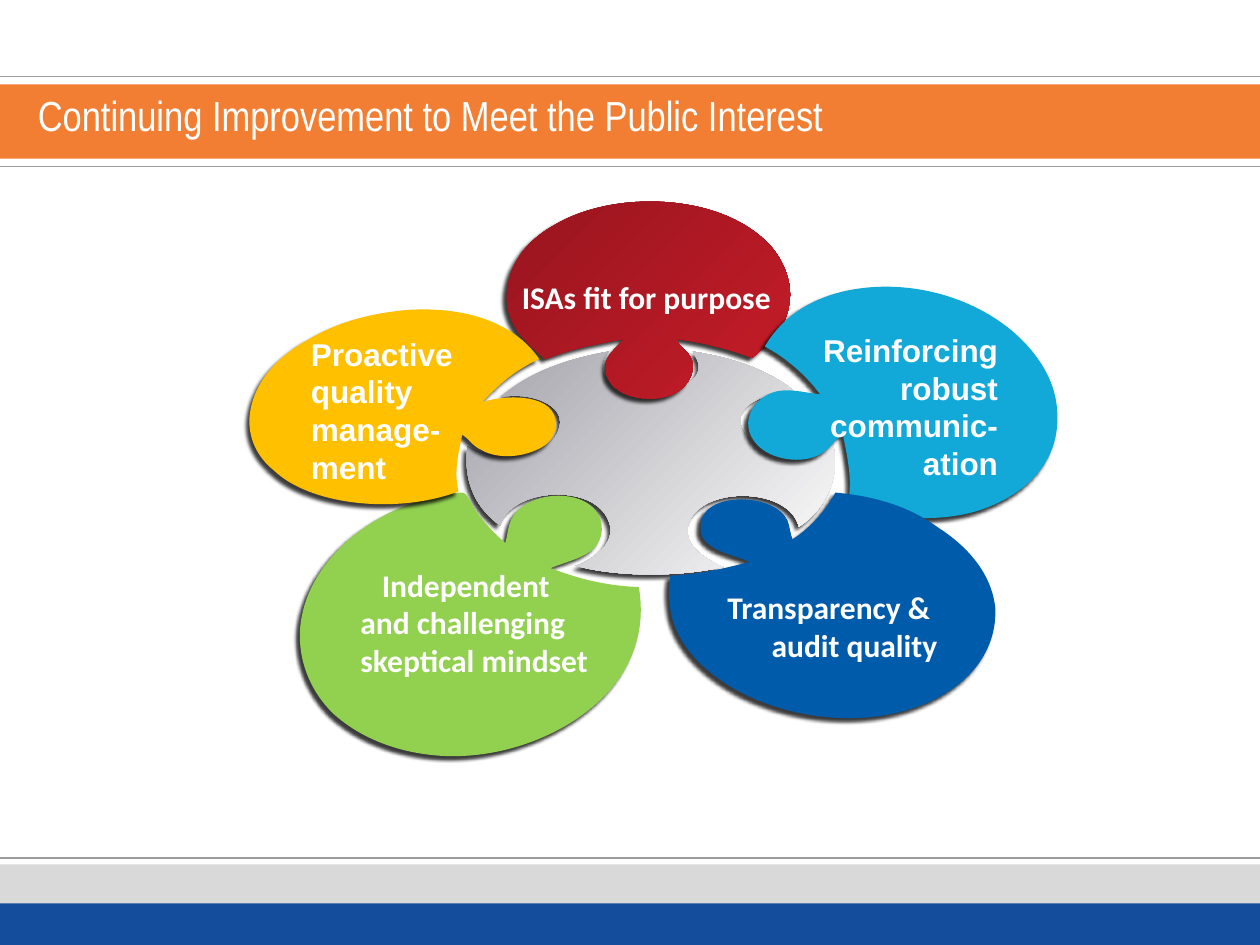
from lxml import etree
from pptx import Presentation
from pptx.dml.color import RGBColor
from pptx.enum.shapes import MSO_CONNECTOR, MSO_SHAPE
from pptx.enum.text import MSO_ANCHOR, MSO_AUTO_SIZE, PP_ALIGN
from pptx.oxml.ns import qn
from pptx.util import Inches, Pt

LEFT, CENTER, RIGHT = PP_ALIGN.LEFT, PP_ALIGN.CENTER, PP_ALIGN.RIGHT
TOP, MIDDLE = MSO_ANCHOR.TOP, MSO_ANCHOR.MIDDLE
RECTANGLE, STRAIGHT = MSO_SHAPE.RECTANGLE, MSO_CONNECTOR.STRAIGHT
NO_AUTOFIT = MSO_AUTO_SIZE.NONE
TITLE_ONLY = 5
SLIDE_WIDTH = 10

# Each outline is a start point, then three points for every Bezier curve.
HUB = [
    (4.83, 2.79), (4.81, 2.83), (4.77, 2.86), (4.78, 2.93), (4.82, 3.17), (5.46, 3.18), (5.54, 2.95),
    (5.56, 2.88), (5.52, 2.83), (5.5, 2.79), (5.83, 2.84), (6.14, 2.95), (6.33, 3.13),
    (6.12, 3.1), (5.84, 3.19), (5.88, 3.37), (5.93, 3.61), (6.41, 3.66), (6.61, 3.52),
    (6.68, 3.82), (6.52, 4.07), (6.34, 4.18), (6.27, 3.87), (5.59, 3.85), (5.47, 4.14),
    (5.4, 4.32), (5.6, 4.44), (5.74, 4.5), (5.39, 4.58), (4.9, 4.58), (4.57, 4.49),
    (4.72, 4.44), (4.92, 4.29), (4.82, 4.11), (4.68, 3.83), (4.05, 3.88), (3.97, 4.17),
    (3.8, 4.05), (3.67, 3.85), (3.71, 3.54), (3.93, 3.68), (4.39, 3.63), (4.44, 3.39),
    (4.49, 3.21), (4.21, 3.11), (3.98, 3.15), (4.19, 2.96), (4.49, 2.85), (4.83, 2.79)]
FIT_FOR_PURPOSE = [
    (5.97, 2.84), (5.79, 2.77), (5.59, 2.72), (5.37, 2.69), (5.39, 2.77), (5.5, 2.79), (5.5, 2.91),
    (5.5, 2.99), (5.44, 3.07), (5.39, 3.1), (5.22, 3.22), (4.84, 3.17), (4.81, 2.95),
    (4.79, 2.81), (4.89, 2.78), (4.95, 2.69), (4.73, 2.73), (4.52, 2.77), (4.33, 2.85),
    (4.19, 2.73), (3.98, 2.57), (4.03, 2.27), (4.07, 2.03), (4.23, 1.88), (4.41, 1.78),
    (4.89, 1.5), (5.77, 1.53), (6.14, 1.98), (6.21, 2.07), (6.28, 2.21), (6.27, 2.37),
    (6.25, 2.61), (6.12, 2.71), (5.97, 2.84)]
COMMUNICATION = [
    (6.73, 3.99), (6.77, 3.81), (6.72, 3.6), (6.69, 3.45), (6.63, 3.48), (6.59, 3.56), (6.52, 3.6),
    (6.37, 3.69), (6.12, 3.65), (6.01, 3.53), (5.84, 3.35), (6, 3.12), (6.2, 3.1),
    (6.31, 3.09), (6.41, 3.12), (6.51, 3.13), (6.4, 2.98), (6.24, 2.84), (6.07, 2.75),
    (6.24, 2.46), (6.54, 2.31), (6.91, 2.28), (7.43, 2.24), (7.94, 2.46), (8.21, 2.81),
    (8.31, 2.94), (8.41, 3.12), (8.39, 3.38), (8.36, 3.76), (8.04, 3.97), (7.74, 4.06),
    (7.42, 4.15), (7.02, 4.12), (6.73, 3.99)]
TRANSPARENCY = [
    (6.63, 3.91), (6.97, 3.94), (7.23, 4.03), (7.45, 4.19), (7.65, 4.32), (7.87, 4.53), (7.9, 4.83),
    (7.91, 5.13), (7.74, 5.35), (7.54, 5.48), (7.33, 5.62), (7.05, 5.7), (6.74, 5.7),
    (6.4, 5.7), (6.09, 5.61), (5.85, 5.48), (5.62, 5.35), (5.4, 5.16), (5.33, 4.89),
    (5.31, 4.79), (5.3, 4.68), (5.32, 4.57), (5.54, 4.56), (5.76, 4.51), (5.95, 4.46),
    (5.81, 4.4), (5.59, 4.37), (5.56, 4.22), (5.56, 4.2), (5.56, 4.15), (5.57, 4.12),
    (5.64, 3.9), (6.15, 3.92), (6.25, 4.13), (6.27, 4.18), (6.27, 4.23), (6.29, 4.28),
    (6.42, 4.2), (6.55, 4.06), (6.63, 3.91)]
MINDSET = [
    (4.01, 4.31), (4.03, 4.24), (4.03, 4.18), (4.06, 4.12), (4.18, 3.88), (4.7, 3.86), (4.77, 4.14),
    (4.78, 4.18), (4.78, 4.24), (4.76, 4.28), (4.71, 4.42), (4.51, 4.45), (4.37, 4.51),
    (4.58, 4.59), (4.8, 4.65), (5.07, 4.66), (5.16, 5.2), (4.84, 5.54), (4.54, 5.73),
    (4.27, 5.9), (3.9, 6.02), (3.51, 6), (3.18, 5.98), (2.87, 5.87), (2.64, 5.66),
    (2.49, 5.51), (2.37, 5.29), (2.38, 5.01), (2.4, 4.67), (2.61, 4.41), (2.82, 4.24),
    (3.04, 4.07), (3.31, 3.95), (3.65, 3.91), (3.66, 3.91), (3.66, 3.91), (3.67, 3.91),
    (3.7, 3.91), (3.73, 3.97), (3.75, 4.01), (3.82, 4.13), (3.93, 4.24), (4.01, 4.31)]
QUALITY = [
    (4.28, 2.85), (4.1, 2.93), (3.96, 3.05), (3.83, 3.19), (4.02, 3.13), (4.43, 3.12), (4.41, 3.38),
    (4.41, 3.44), (4.37, 3.5), (4.33, 3.53), (4.21, 3.62), (3.97, 3.66), (3.82, 3.57),
    (3.75, 3.54), (3.72, 3.48), (3.67, 3.45), (3.64, 3.58), (3.6, 3.75), (3.64, 3.9),
    (3.17, 4.08), (2.47, 4.02), (2.17, 3.73), (2.07, 3.65), (1.97, 3.51), (1.98, 3.32),
    (2, 3.03), (2.22, 2.82), (2.44, 2.7), (2.67, 2.56), (2.92, 2.49), (3.23, 2.46),
    (3.7, 2.43), (4.08, 2.56), (4.28, 2.85)]


def color(value):
    return RGBColor.from_string(value)


def write_text(shape, lines, size=18, font="Calibri", align=LEFT, anchor=MIDDLE, bold=True,
               insets=(0.1, 0.05, 0.1, 0.05), spacing=None):
    """Fill a shape with one paragraph per line; insets run left, top, right, bottom."""
    frame = shape.text_frame
    frame.word_wrap = True
    frame.auto_size = NO_AUTOFIT
    frame.vertical_anchor = anchor
    (frame.margin_left, frame.margin_top,
     frame.margin_right, frame.margin_bottom) = map(Inches, insets)
    for index, line in enumerate(lines):
        paragraph = frame.add_paragraph() if index else frame.paragraphs[0]
        paragraph.alignment = align
        paragraph.line_spacing = spacing
        run = paragraph.add_run()
        run.text = line
        run.font.size, run.font.name, run.font.bold = Pt(size), font, bold
        run.font.color.rgb = color("FFFFFF")


def curve_outline(shape):
    """Turn every three line segments of a freeform into one Bezier curve."""
    outline = shape._element.find(".//" + qn("a:path"))
    segments = outline.findall(qn("a:lnTo"))
    for first in range(0, len(segments), 3):
        curve = etree.Element(qn("a:cubicBezTo"))
        segments[first].addprevious(curve)
        for segment in segments[first:first + 3]:
            curve.append(segment[0])
            outline.remove(segment)


def add_shadow(shape):
    effects = shape._element.spPr.find(qn("a:effectLst"))
    shadow = etree.SubElement(effects, qn("a:outerShdw"), blurRad=str(Pt(2)), dist=str(Pt(3)),
                              dir=str(135 * 60000), algn="ctr", rotWithShape="0")
    black = etree.SubElement(shadow, qn("a:srgbClr"), val="000000")
    etree.SubElement(black, qn("a:alpha"), val="76000")


class PuzzleSlide:
    rule_color = "999B9D"

    def __init__(self, presentation):
        self.slide = presentation.slides.add_slide(presentation.slide_layouts[TITLE_ONLY])
        self.shapes = self.slide.shapes

    def band(self, top, height, fill):
        shape = self.shapes.add_shape(RECTANGLE, 0, Inches(top), Inches(SLIDE_WIDTH), Inches(height))
        shape.shadow.inherit = False
        shape.fill.solid()
        shape.fill.fore_color.rgb = color(fill)
        shape.line.fill.background()

    def rule(self, top):
        line = self.shapes.add_connector(STRAIGHT, 0, Inches(top), Inches(SLIDE_WIDTH), Inches(top))
        line.line.color.rgb = color(self.rule_color)
        line.line.width = Pt(0.75)
        etree.SubElement(line._element.spPr, qn("a:effectLst"))

    def title(self, text):
        title = self.shapes.title
        title.left, title.top = Inches(0.3), Inches(0.62)
        title.width, title.height = Inches(8.25), Inches(0.58)
        write_text(title, [text], size=24, font="Arial Narrow", bold=False, insets=(0, 0, 0, 0))
        self.shapes._spTree.append(title._element)  # in front of the band

    def piece(self, points, *fills):
        """Draw a puzzle piece with one fill colour, or two for a gradient."""
        start, *others = [(Inches(x), Inches(y)) for x, y in points]
        builder = self.shapes.build_freeform(*start)
        builder.add_line_segments(others, close=True)
        shape = builder.convert_to_shape()
        curve_outline(shape)
        if len(fills) == 1:
            shape.fill.solid()
            shape.fill.fore_color.rgb = color(fills[0])
        else:
            shape.fill.gradient()
            shape.fill.gradient_angle = 315
            for stop, fill in zip(shape.fill.gradient_stops, fills):
                stop.color.rgb = color(fill)
        shape.line.fill.background()
        shape.shadow.inherit = False
        add_shadow(shape)
        return shape

    def label(self, left, top, width, height, lines, align=LEFT):
        box = self.shapes.add_textbox(Inches(left), Inches(top), Inches(width), Inches(height))
        write_text(box, lines, font="Arial", align=align, anchor=TOP, spacing=Pt(21.5))


def main():
    presentation = Presentation()
    presentation.slide_width, presentation.slide_height = Inches(SLIDE_WIDTH), Inches(7.5)
    puzzle = PuzzleSlide(presentation)

    for top, height, fill in [(6.86, 0.64, "D9D9D9"), (0.67, 0.59, "F17E32"), (7.17, 0.33, "134D9C")]:
        puzzle.band(top, height, fill)
    for top in (0.61, 1.32, 6.81):
        puzzle.rule(top)

    puzzle.piece(HUB, "A3A2AA", "FFFFFF")
    purpose = puzzle.piece(FIT_FOR_PURPOSE, "95151E", "C71C28")
    write_text(purpose, ["ISAs fit for purpose"], align=CENTER)
    puzzle.piece(COMMUNICATION, "12A9D9")
    transparency = puzzle.piece(TRANSPARENCY, "005BAA")
    write_text(transparency, ["Transparency & ", "audit quality"], align=RIGHT,
               insets=(0.1, 0.38, 0.47, 0.05))
    mindset = puzzle.piece(MINDSET, "92D050")
    write_text(mindset, ["Independent", "and challenging", "skeptical mindset"],
               insets=(0.49, 0.05, 0.1, 0.05))
    first_line = mindset.text_frame.paragraphs[0]._p.get_or_add_pPr()
    first_line.set("indent", str(Inches(0.17)))
    puzzle.piece(QUALITY, "FFC000")

    puzzle.title("Continuing Improvement to Meet the Public Interest")
    puzzle.label(2.37, 2.61, 1.7, 1.62, ["Proactive", "quality", "manage-", "ment"])
    puzzle.label(5.89, 2.58, 2.13, 1.31, ["Reinforcing robust communic-", "ation"], align=RIGHT)
    presentation.save("out.pptx")


if __name__ == "__main__":
    main()
